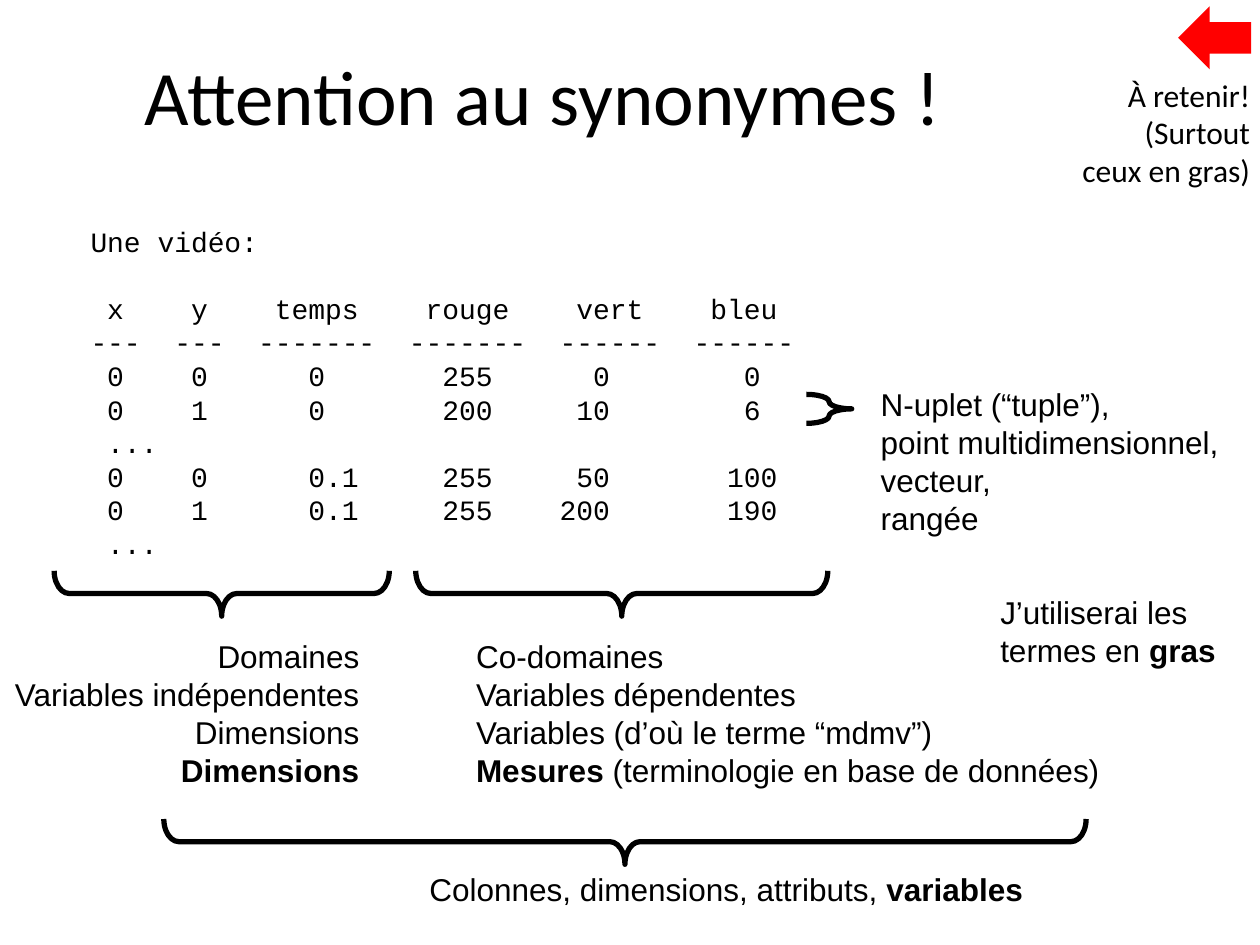
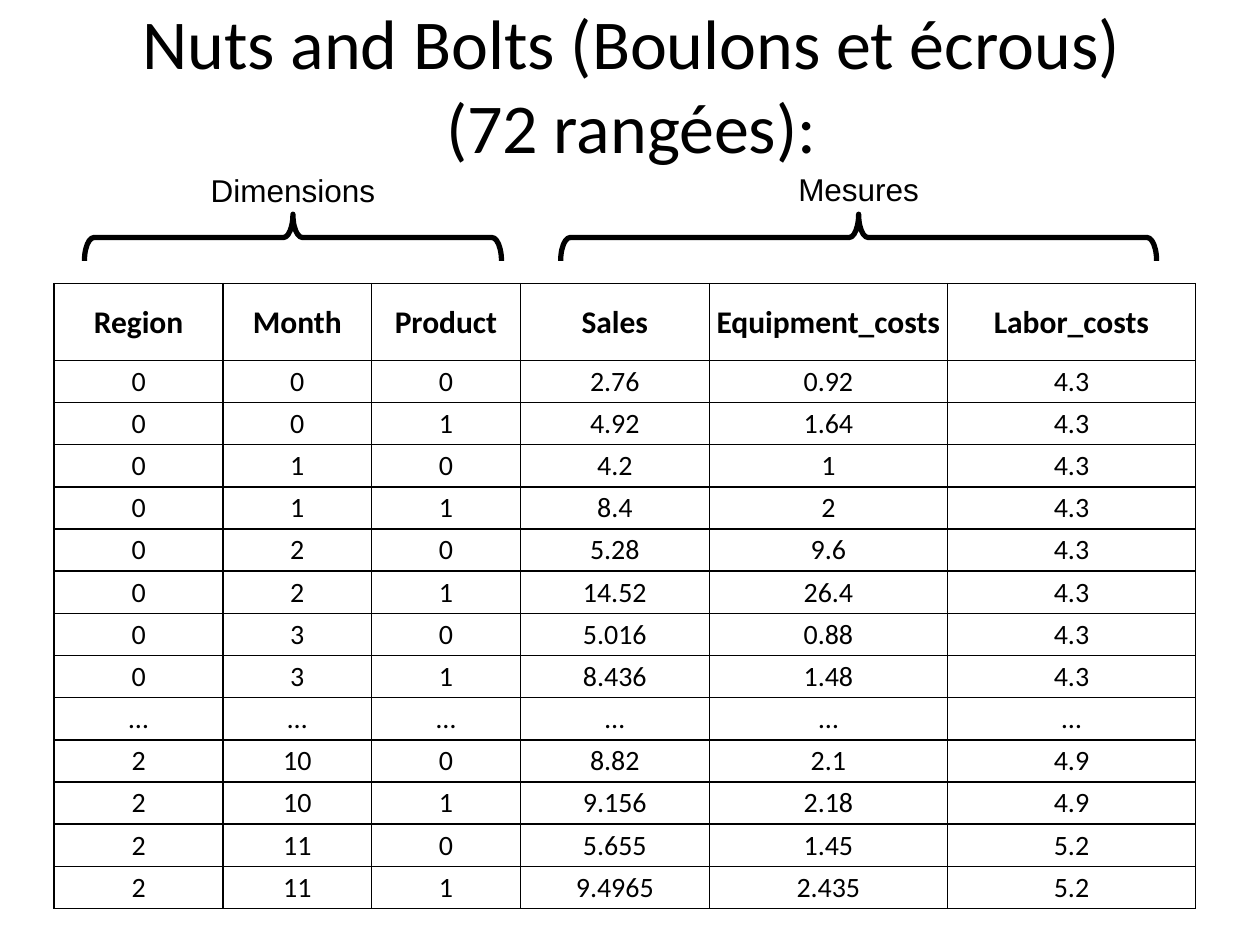
from lxml import etree
from pptx import Presentation
from pptx.dml.color import RGBColor
from pptx.enum.shapes import MSO_SHAPE
from pptx.enum.text import MSO_ANCHOR, PP_ALIGN
from pptx.oxml.ns import qn
from pptx.util import Inches, Pt

LEFT, CENTER, RIGHT = PP_ALIGN.LEFT, PP_ALIGN.CENTER, PP_ALIGN.RIGHT
TOP, MIDDLE = MSO_ANCHOR.TOP, MSO_ANCHOR.MIDDLE
LEFT_BRACE, RIGHT_BRACE = MSO_SHAPE.LEFT_BRACE, MSO_SHAPE.RIGHT_BRACE
RIGHT_ARROW = MSO_SHAPE.RIGHT_ARROW

BLACK, WHITE, RED = "000000", "FFFFFF", "FF0000"
BODY_FONT, TITLE_FONT, CODE_FONT = "Arial", "Calibri", "Courier New"
LINE_HEIGHT = 1.2

LISTING = [
    " x    y    temps    rouge    vert    bleu",
    "---  ---  -------  -------  ------  ------",
    " 0    0      0       255      0        0",
    " 0    1      0       200     10        6",
    " ...",
    " 0    0      0.1     255     50       100",
    " 0    1      0.1     255    200       190",
    " ...",
]

COLUMN_WIDTHS = [1.34, 1.18, 1.18, 1.5, 1.89, 1.97]
HEADERS = ["Region", "Month", "Product", "Sales", "Equipment_costs", "Labor_costs"]
SALES_ROWS = [
    ["0", "0", "0", "2.76", "0.92", "4.3"],
    ["0", "0", "1", "4.92", "1.64", "4.3"],
    ["0", "1", "0", "4.2", "1", "4.3"],
    ["0", "1", "1", "8.4", "2", "4.3"],
    ["0", "2", "0", "5.28", "9.6", "4.3"],
    ["0", "2", "1", "14.52", "26.4", "4.3"],
    ["0", "3", "0", "5.016", "0.88", "4.3"],
    ["0", "3", "1", "8.436", "1.48", "4.3"],
    ["…"] * 6,
    ["2", "10", "0", "8.82", "2.1", "4.9"],
    ["2", "10", "1", "9.156", "2.18", "4.9"],
    ["2", "11", "0", "5.655", "1.45", "5.2"],
    ["2", "11", "1", "9.4965", "2.435", "5.2"],
]


def color(value):
    return RGBColor.from_string(value)


def bold(text):
    return text, True


def fill_paragraph(paragraph, pieces, size, font, align):
    paragraph.alignment = align
    paragraph.line_spacing = Pt(round(size * LINE_HEIGHT, 1))
    for piece in pieces:
        text, is_bold = piece if isinstance(piece, tuple) else (piece, False)
        for number, part in enumerate(text.split("\n")):
            if number:
                paragraph.add_line_break()
            run = paragraph.add_run()
            run.text = part
            run.font.name = font
            run.font.size = Pt(size)
            run.font.bold = is_bold
            run.font.color.rgb = color(BLACK)


def add_text(slide, box, lines, size=18, font=BODY_FONT, align=LEFT, anchor=TOP):
    shape = slide.shapes.add_textbox(*map(Inches, box))
    frame = shape.text_frame
    frame.word_wrap = True
    frame.vertical_anchor = anchor
    for number, line in enumerate(lines):
        paragraph = frame.add_paragraph() if number else frame.paragraphs[0]
        pieces = line if isinstance(line, list) else [line]
        fill_paragraph(paragraph, pieces, size, font, align)
    return frame


def add_title(slide, box, text, size):
    add_text(slide, box, [text], size, TITLE_FONT, CENTER, MIDDLE)


def add_brace(slide, box, kind, rotation, curve):
    left, top, width, height = box
    if rotation == 270:
        left, top = left + (width - height) / 2, top + (height - width) / 2
        width, height = height, width
    brace = slide.shapes.add_shape(kind, *map(Inches, (left, top, width, height)))
    brace.rotation = rotation
    brace.adjustments[0] = curve
    brace.shadow.inherit = False
    brace.fill.background()
    brace.line.color.rgb = color(BLACK)
    brace.line.width = Pt(3)


def add_brace_below(slide, left, top, width):
    add_brace(slide, (left, top, width, 0.36), LEFT_BRACE, 270, 0.334)


def add_video_listing(slide, box):
    frame = add_text(slide, box, ["Une vidéo:"] + LISTING, 16, CODE_FONT)
    frame.paragraphs[0].space_after = Pt(19.2)


def add_column_terms(slide, box):
    left, top, width, height = box
    add_brace_below(slide, left + 0.43, top, 2.66)
    add_brace_below(slide, left + 3.3, top, 3.27)
    add_text(slide, (left, top + 0.48, 2.95, 1.31), [
        "Domaines", "Variables indépendentes", "Dimensions", [bold("Dimensions")],
    ], align=RIGHT)
    add_text(slide, (left + 3.68, top + 0.48, width - 3.68, 1.31), [
        "Co-domaines",
        "Variables dépendentes",
        "Variables (d’où le terme “mdmv”)",
        [bold("Mesures"), " (terminologie en base de données)"],
    ])
    add_brace_below(slide, left + 1.3, top + 1.97, 7.32)
    add_text(slide, (left + 3.31, top + height - 0.4, 6.26, 0.4),
             [["Colonnes, dimensions, attributs, ", bold("variables")]])


def add_row_terms(slide, box):
    left, top, width, height = box
    add_brace(slide, (left, top + 0.12, 0.36, 0.23), LEFT_BRACE, 180, 0.334)
    add_text(slide, (left + 0.49, top, width - 0.49, height), [
        "N-uplet (“tuple”),\npoint multidimensionnel,", "vecteur,\nrangée",
    ])


def add_reminder(slide, box):
    left, top, width, height = box
    arrow = slide.shapes.add_shape(
        RIGHT_ARROW, *map(Inches, (left + 0.88, top, 0.58, 0.5)))
    arrow.rotation = 180
    arrow.shadow.inherit = False
    arrow.fill.solid()
    arrow.fill.fore_color.rgb = color(RED)
    arrow.line.fill.background()
    add_text(slide, (left, top + 0.5, width, height - 0.5),
             ["À retenir!\n(Surtout ceux en gras)"], font=TITLE_FONT, align=RIGHT)


def add_measure_label(slide, box, text):
    left, top, width, height = box
    add_text(slide, (left, top, width, 0.4), [text], align=CENTER)
    add_brace(slide, (left, top + height - 0.37, width, 0.37), RIGHT_BRACE, 270, 0.204)


def draw_borders(cell):
    properties = cell._tc.get_or_add_tcPr()
    for side in ("a:lnL", "a:lnR", "a:lnT", "a:lnB"):
        line = etree.SubElement(properties, qn(side), w=str(Pt(1)))
        fill = etree.SubElement(line, qn("a:solidFill"))
        etree.SubElement(fill, qn("a:srgbClr"), val=BLACK)


def add_sales_table(slide, box):
    rows = [HEADERS] + SALES_ROWS
    table = slide.shapes.add_table(len(rows), len(HEADERS), *map(Inches, box)).table
    table.first_row = False
    table.horz_banding = False
    for column, width in zip(table.columns, COLUMN_WIDTHS):
        column.width = Inches(width)
    for row_number, values in enumerate(rows):
        is_header = row_number == 0
        table.rows[row_number].height = Inches(0.61 if is_header else 0.335)
        for column_number, value in enumerate(values):
            cell = table.cell(row_number, column_number)
            draw_borders(cell)
            cell.fill.solid()
            cell.fill.fore_color.rgb = color(WHITE)
            cell.vertical_anchor = MIDDLE
            cell.margin_left = cell.margin_right = cell.margin_top = Inches(0.01)
            cell.margin_bottom = 0
            fill_paragraph(cell.text_frame.paragraphs[0], [(value, is_header)],
                           18 if is_header else 16, TITLE_FONT, CENTER)


def build_synonyms_slide(slide):
    add_video_listing(slide, (0.62, 1.73, 6.38, 2.79))
    add_column_terms(slide, (0, 4.53, 9.47, 2.73))
    add_row_terms(slide, (6.4, 3.01, 3.6, 1.31))
    add_title(slide, (0, 0.13, 8.62, 1.25), "Attention au synonymes !", 44)
    add_text(slide, (7.84, 4.66, 2.05, 0.71),
             [["J’utiliserai les termes en ", bold("gras")]])
    add_reminder(slide, (8.47, 0.05, 1.55, 1.51))


def build_sales_slide(slide):
    add_title(slide, (0.51, 0.01, 9, 1.3),
              "Nuts and Bolts (Boulons et écrous)\n(72 rangées):", 40)
    add_sales_table(slide, (0.43, 2.25, 9.06, 4.96))
    add_measure_label(slide, (0.67, 1.31, 3.31, 0.76), "Dimensions")
    add_measure_label(slide, (4.45, 1.3, 4.73, 0.77), "Mesures")


def main():
    presentation = Presentation()
    presentation.slide_width = Inches(10)
    presentation.slide_height = Inches(7.5)
    blank_layout = presentation.slide_layouts[6]
    for build in (build_synonyms_slide, build_sales_slide):
        build(presentation.slides.add_slide(blank_layout))
    presentation.save("out.pptx")


if __name__ == "__main__":
    main()
